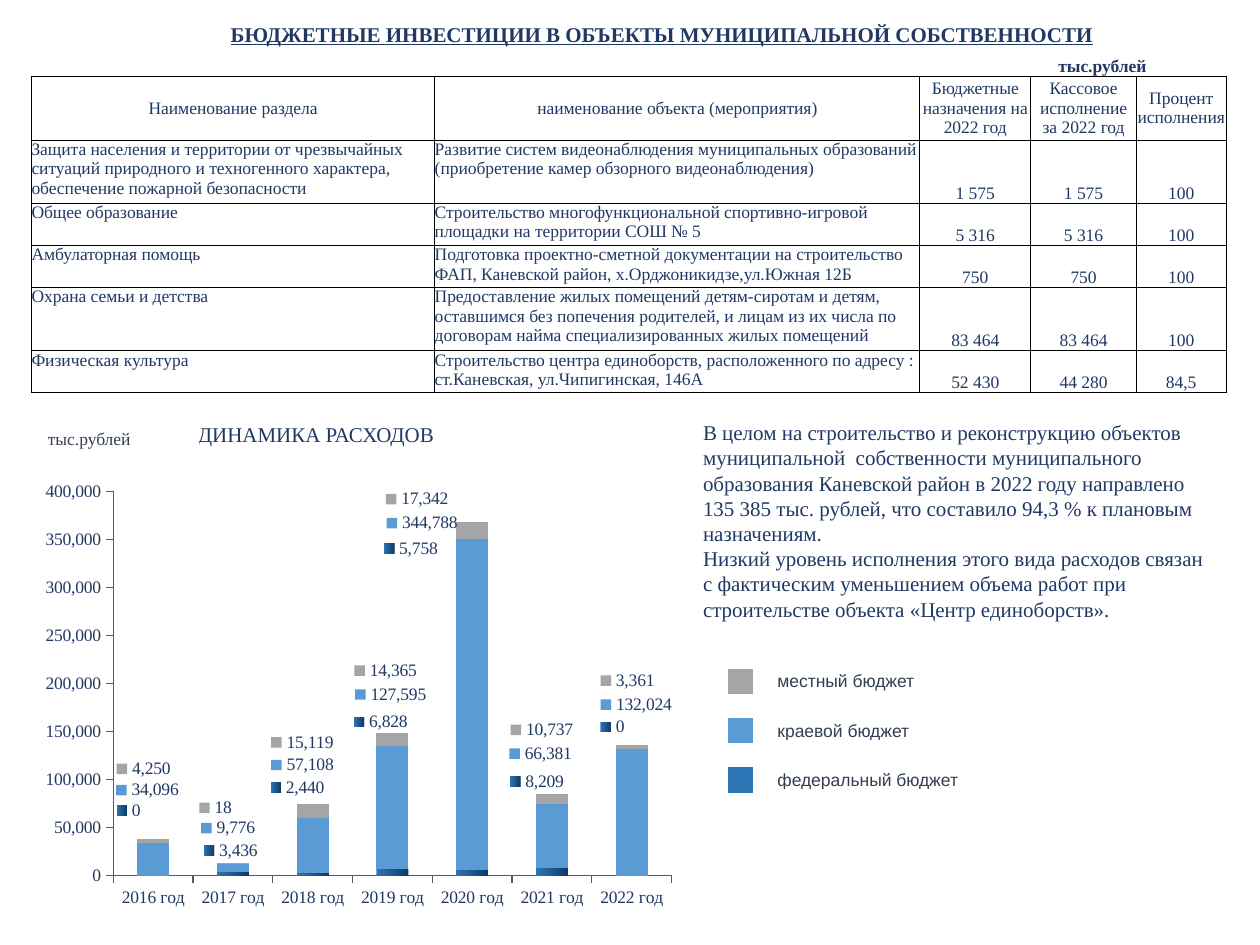
from lxml import etree
from pptx import Presentation
from pptx.chart.data import CategoryChartData
from pptx.dml.color import RGBColor
from pptx.enum.chart import XL_CHART_TYPE, XL_LABEL_POSITION, XL_TICK_MARK
from pptx.enum.shapes import MSO_SHAPE
from pptx.enum.text import MSO_ANCHOR, MSO_AUTO_SIZE, PP_ALIGN
from pptx.oxml import parse_xml
from pptx.oxml.ns import nsdecls, qn
from pptx.util import Inches, Pt

STACKED = XL_CHART_TYPE.COLUMN_STACKED
LABEL_CENTER = XL_LABEL_POSITION.CENTER
TICK_OUTSIDE = XL_TICK_MARK.OUTSIDE
SQUARE = MSO_SHAPE.FLOWCHART_PROCESS
TOP, MIDDLE, BOTTOM = MSO_ANCHOR.TOP, MSO_ANCHOR.MIDDLE, MSO_ANCHOR.BOTTOM
LEFT, CENTER = PP_ALIGN.LEFT, PP_ALIGN.CENTER
FIT_SHAPE = MSO_AUTO_SIZE.SHAPE_TO_FIT_TEXT

SERIF, SANS = "Times New Roman", "Arial"
COLORS = {"navy": "203864", "slate": "333F50", "local": "A5A5A5", "region": "5B9BD5",
          "federal": "2E75B6", "federal_dark": "0F3B66", "border": "000000", "axis": "595959"}

COLUMN_WIDTHS = [3.2, 3.85, 0.88, 0.84, 0.71]
ROW_HEIGHTS = [0.5, 0.5, 0.33, 0.33, 0.5, 0.33]
INVESTMENTS = [
    ["Наименование раздела", "наименование объекта (мероприятия)",
     "Бюджетные назначения на 2022 год", "Кассовое исполнение за 2022 год", "Процент исполнения"],
    ["Защита населения и территории от чрезвычайных ситуаций природного и техногенного характера, "
     "обеспечение пожарной безопасности",
     "Развитие систем видеонаблюдения муниципальных образований "
     "(приобретение камер обзорного видеонаблюдения)", "1 575", "1 575", "100"],
    ["Общее образование",
     "Строительство многофункциональной спортивно-игровой площадки на территории СОШ № 5",
     "5 316", "5 316", "100"],
    ["Амбулаторная помощь",
     "Подготовка проектно-сметной документации на строительство ФАП, Каневской район, "
     "х.Орджоникидзе,ул.Южная 12Б", "750", "750", "100"],
    ["Охрана семьи и детства",
     "Предоставление жилых помещений детям-сиротам и детям, оставшимся без попечения родителей, "
     "и лицам из их числа по договорам найма специализированных жилых помещений",
     "83 464", "83 464", "100"],
    ["Физическая культура",
     "Строительство центра единоборств, расположенного по адресу : "
     "ст.Каневская, ул.Чипигинская, 146А", "52 430", "44 280", "84,5"],
]
SUMMARY = [
    "В целом на строительство и реконструкцию объектов муниципальной  собственности муниципального "
    "образования Каневской район в 2022 году направлено 135 385 тыс. рублей, что составило 94,3 % "
    "к плановым назначениям.",
    "Низкий уровень исполнения этого вида расходов связан с фактическим уменьшением объема работ "
    "при строительстве объекта «Центр единоборств».",
]
LEGEND = [("местный бюджет", "local"), ("краевой бюджет", "region"),
          ("федеральный бюджет", "federal")]

# Chart frame and plot area on the page, in inches
CHART = (0.26, 3.75, 5.17, 3.52)
PLOT = (0.9, 3.9, 4.43, 3.05)
AXIS_MAX = 400000
YEARS = [f"{year} год" for year in range(2016, 2023)]
# Name, colour, values, label centres on the page
SERIES = [
    ("Series 1", "federal", [0, 3436, 2440, 6828, 5758, 8209, 0],
     [(1.02, 6.43), (1.83, 6.75), (2.36, 6.25), (3.02, 5.73), (3.26, 4.35), (4.26, 6.2), (4.86, 5.77)]),
    ("Series 2", "region", [34096, 9776, 57108, 127595, 344788, 66381, 132024],
     [(1.17, 6.27), (1.81, 6.57), (2.4, 6.07), (3.1, 5.51), (3.35, 4.15), (4.29, 5.98), (5.05, 5.59)]),
    ("Series 3", "local", [4250, 18, 15119, 14365, 17342, 10737, 3361],
     [(1.14, 6.1), (1.71, 6.41), (2.4, 5.89), (3.06, 5.32), (3.31, 3.96), (4.3, 5.79), (4.98, 5.4)]),
]


def color(name):
    return RGBColor.from_string(COLORS[name])


def inches(values):
    return [Inches(value) for value in values]


def style_font(font, size, tint, name=SERIF, bold=False, underline=False):
    font.size, font.name, font.bold, font.underline = Pt(size), name, bold, underline
    font.color.rgb = color(tint)


def add_text(page, place, lines, size, tint="navy", insets=(0.07, 0.04), wrap=True,
             anchor=TOP, align=LEFT, **look):
    box = page.shapes.add_textbox(*inches(place))
    frame = box.text_frame
    frame.word_wrap, frame.auto_size, frame.vertical_anchor = wrap, FIT_SHAPE, anchor
    frame.margin_left = frame.margin_right = Inches(insets[0])
    frame.margin_top = frame.margin_bottom = Inches(insets[1])
    frame.text = "\n".join(lines)
    for paragraph in frame.paragraphs:
        paragraph.alignment = align
        for span in paragraph.runs:
            style_font(span.font, size, tint, **look)
    return box


def fill_cell(cell, text, size, tint, name=SERIF, anchor=BOTTOM, align=LEFT):
    cell.fill.background()
    cell.margin_left = cell.margin_right = cell.margin_top = cell.margin_bottom = 0
    cell.vertical_anchor = anchor
    cell.text = text
    paragraph = cell.text_frame.paragraphs[0]
    paragraph.alignment = align
    style_font(paragraph.runs[0].font, size, tint, name)


def add_borders(cell):
    properties = cell._tc.get_or_add_tcPr()
    for index, side in enumerate(("lnL", "lnR", "lnT", "lnB")):
        properties.insert(index, parse_xml(
            f'<a:{side} {nsdecls("a")} w="6350"><a:solidFill><a:srgbClr val="{COLORS["border"]}"/>'
            f'</a:solidFill></a:{side}>'))


def add_plain_table(page, left, top, widths, heights):
    frame = page.shapes.add_table(len(heights), len(widths),
                                  *inches((left, top, sum(widths), sum(heights))))
    table = frame.table
    table.first_row = table.horz_banding = False
    for column, width in zip(table.columns, widths):
        column.width = Inches(width)
    for row, height in zip(table.rows, heights):
        row.height = Inches(height)
    return table


def add_caption(page, left, top, text, size, tint, name):
    table = add_plain_table(page, left, top, [2.25], [0.18])
    fill_cell(table.cell(0, 0), text, size, tint, name)


def add_investments(page):
    table = add_plain_table(page, 0.25, 0.61, COLUMN_WIDTHS, ROW_HEIGHTS)
    for row, texts in enumerate(INVESTMENTS):
        for column, text in enumerate(texts):
            is_text = row > 0 and column < 2
            anchor = MIDDLE if row == 0 else TOP if is_text else BOTTOM
            cell = table.cell(row, column)
            fill_cell(cell, text, 10, "navy", anchor=anchor, align=LEFT if is_text else CENTER)
            add_borders(cell)


def manual_layout(x, y, size=None):
    """Layout in fractions of the chart; a size makes it an inner plot area."""
    parts = [("x", x), ("y", y)]
    if size:
        parts = [("layoutTarget", "inner"), ("xMode", "edge"), ("yMode", "edge"),
                 *parts, ("w", size[0]), ("h", size[1])]
    layout = etree.Element(qn("c:layout"))
    manual = etree.SubElement(layout, qn("c:manualLayout"))
    for tag, value in parts:
        text = value if isinstance(value, str) else f"{value:.4f}"
        etree.SubElement(manual, qn(f"c:{tag}")).set("val", text)
    return layout


def place_label(point, dx, dy):
    label = point.data_label
    label.position = LABEL_CENTER
    element = label._get_or_add_dLbl()
    element.find(qn("c:idx")).addnext(manual_layout(dx / CHART[2], dy / CHART[3]))
    element.find(qn("c:showLegendKey")).set("val", "1")


def hide_leader_lines(labels):
    for element in labels._element.findall(qn("c:showLeaderLines")):
        element.set("val", "0")


def style_axis(axis):
    axis.has_major_gridlines = False
    axis.major_tick_mark = TICK_OUTSIDE
    axis.format.line.color.rgb = color("axis")
    style_font(axis.tick_labels.font, 10, "navy")


def add_spending_chart(page):
    data = CategoryChartData(number_format="#,##0")
    data.categories = YEARS
    for name, _, values, _ in SERIES:
        data.add_series(name, values)
    chart = page.shapes.add_chart(STACKED, *inches(CHART), data).chart
    chart.has_legend = chart.has_title = False
    style_font(chart.font, 10, "navy")
    style_axis(chart.category_axis)
    style_axis(chart.value_axis)
    chart.value_axis.minimum_scale, chart.value_axis.maximum_scale = 0, AXIS_MAX
    chart.value_axis.major_unit = 50000

    plot_area = chart._chartSpace.chart.plotArea
    for layout in plot_area.findall(qn("c:layout")):
        plot_area.remove(layout)
    plot_area.insert(0, manual_layout((PLOT[0] - CHART[0]) / CHART[2], (PLOT[1] - CHART[1]) / CHART[3],
                                      (PLOT[2] / CHART[2], PLOT[3] / CHART[3])))

    plot = chart.plots[0]
    plot.gap_width, plot.overlap, plot.vary_by_categories = 150, 100, False
    stacked = [0] * len(YEARS)
    for series, (_, tint, values, centers) in zip(plot.series, SERIES):
        fill = series.format.fill
        if tint == "federal":
            fill.gradient()
            fill.gradient_angle = 0
            for stop, shade in zip(fill.gradient_stops, ("federal", "federal_dark")):
                stop.color.rgb = color(shade)
        else:
            fill.solid()
            fill.fore_color.rgb = color(tint)
        labels = series.data_labels
        labels.show_value = True
        labels.number_format, labels.number_format_is_linked = "#,##0", False
        hide_leader_lines(labels)
        # Labels are shifted from the middle of their bar segment
        for index, (value, (x, y)) in enumerate(zip(values, centers)):
            bar_x = PLOT[0] + PLOT[2] * (index + 0.5) / len(YEARS)
            bar_y = PLOT[1] + PLOT[3] * (1 - (stacked[index] + value / 2) / AXIS_MAX)
            place_label(series.points[index], x - bar_x, y - bar_y)
            stacked[index] += value


def add_legend(page):
    for index, (text, tint) in enumerate(LEGEND):
        top = 5.31 + 0.39 * index
        key = page.shapes.add_shape(SQUARE, *inches((5.78, top, 0.2, 0.2)))
        key.shadow.inherit = False
        key.fill.solid()
        key.fill.fore_color.rgb = color(tint)
        key.line.fill.background()
        add_caption(page, 6.17, top, text, 10, "slate", SANS)


def main():
    deck = Presentation()
    deck.slide_width, deck.slide_height = Inches(10), Inches(7.5)
    page = deck.slides.add_slide(deck.slide_layouts[6])

    # Heading and table of investments
    title = add_text(page, (0.28, 0.12, 9.46, 0.3),
                     ["БЮДЖЕТНЫЕ ИНВЕСТИЦИИ В ОБЪЕКТЫ МУНИЦИПАЛЬНОЙ СОБСТВЕННОСТИ"], 12,
                     insets=(0.1, 0.05), anchor=MIDDLE, align=CENTER, bold=True, underline=True)
    title.text_frame.paragraphs[0]._p.get_or_add_pPr().set("indent", str(Inches(0.49)))
    add_text(page, (8.33, 0.4, 0.86, 0.24), ["тыс.рублей"], 10, wrap=False, bold=True)
    add_investments(page)

    # Spending chart
    add_text(page, (0.31, 3.36, 0.82, 0.24), ["тыс.рублей"], 10, "slate", wrap=False)
    add_caption(page, 1.57, 3.35, "ДИНАМИКА РАСХОДОВ", 12, "navy", SERIF)
    add_spending_chart(page)

    # Summary and legend
    add_text(page, (5.51, 3.29, 4.2, 1.69), SUMMARY, 12)
    add_legend(page)
    deck.save("out.pptx")


if __name__ == "__main__":
    main()
